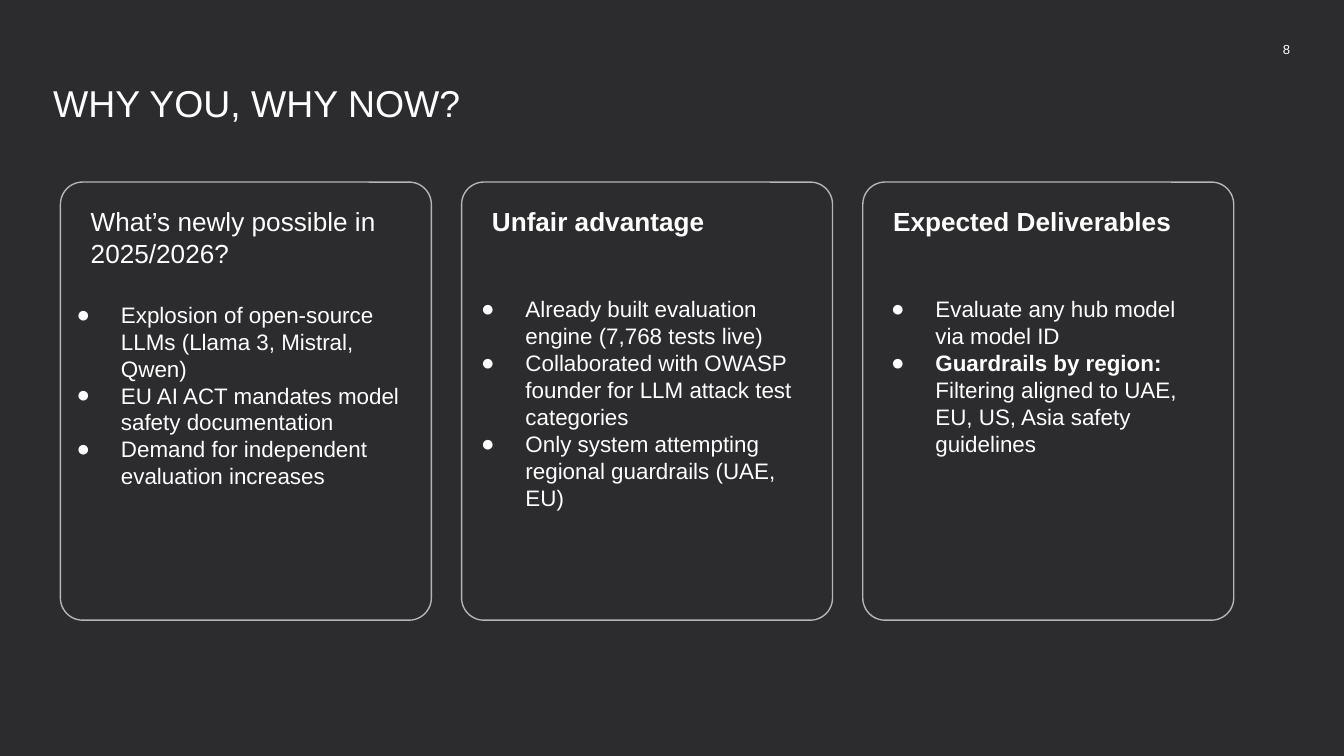
import pptx
import pptx.dml.color
import pptx.enum.shapes
import pptx.enum.text
import pptx.oxml
import pptx.oxml.ns
import pptx.util

PX = 9144
FONT = "Arial"
DARK, GREY, WHITE = "2C2C2E", "B5B5B7", "FFFFFF"
LEFT, STEP, WIDE = 45, 298.5, 276
CARDS = [
    ("What’s newly possible in 2025/2026?", False, (40, 209, 265), [
        "Explosion of open-source LLMs (Llama 3, Mistral, Qwen)",
        "EU AI ACT mandates model safety documentation",
        "Demand for independent evaluation increases"]),
    ("Unfair advantage", True, (341, 205, 265), [
        "Already built evaluation engine (7,768 tests live)",
        "Collaborated with OWASP founder for LLM attack test categories",
        "Only system attempting regional guardrails (UAE, EU)"]),
    ("Expected Deliverables", True, (646, 205, 249), [
        "Evaluate any hub model via model ID",
        ("Guardrails by region: ",
         "Filtering aligned to UAE, EU, US, Asia safety guidelines")]),
]


def px(*sizes):
    """Turn px lengths into EMU."""
    return [pptx.util.Emu(round(size * PX)) for size in sizes]


def paint(color, code):
    """Set a colour format from a hex string."""
    color.rgb = pptx.dml.color.RGBColor.from_string(code)


def style(part, size, bold=False):
    """Format the spacing and runs of a paragraph."""
    part.line_spacing = 1.0
    for run in part.runs:
        run.font.name = FONT
        run.font.size = pptx.util.Pt(size)
        run.font.bold = bold
        paint(run.font.color, WHITE)


def fit(frame, pad=0, anchor="TOP"):
    """Set the wrap, insets and anchor of a text frame."""
    frame.word_wrap = True
    frame.auto_size = pptx.enum.text.MSO_AUTO_SIZE.NONE
    frame.margin_left = frame.margin_right = 0
    frame.margin_top, frame.margin_bottom = px(pad, pad)
    frame.vertical_anchor = pptx.enum.text.MSO_ANCHOR[anchor]


def label(slide, text, box, size, bold=False, pad=0, anchor="TOP", align="LEFT"):
    """Add a text box with one paragraph."""
    frame = slide.shapes.add_textbox(*px(*box)).text_frame
    fit(frame, pad, anchor)
    frame.text = text
    part = frame.paragraphs[0]
    part.alignment = pptx.enum.text.PP_ALIGN[align]
    style(part, size, bold)


def bullet(part):
    """Give a paragraph a hanging round bullet."""
    props = part._p.get_or_add_pPr()
    props.set("marL", str(px(50)[0]))
    props.set("indent", str(px(-33)[0]))
    names = pptx.oxml.ns.nsdecls("a")
    for xml in (f'<a:buClr {names}><a:srgbClr val="{WHITE}"/></a:buClr>',
                f'<a:buFont {names} typeface="{FONT}"/>',
                f'<a:buChar {names} char="●"/>'):
        props.append(pptx.oxml.parse_xml(xml))


def points(slide, items, box):
    """Add a bulleted list; a pair has a bold lead."""
    frame = slide.shapes.add_textbox(*px(*box)).text_frame
    fit(frame, 15)
    for rank, item in enumerate(items):
        part = frame.add_paragraph() if rank else frame.paragraphs[0]
        bullet(part)
        texts = (item,) if isinstance(item, str) else item
        for text in texts:
            part.add_run().text = text
        style(part, 12)
        part.runs[0].font.bold = len(texts) > 1


def card(slide, left):
    """Add an outlined rounded card."""
    kind = pptx.enum.shapes.MSO_SHAPE.ROUNDED_RECTANGLE
    shape = slide.shapes.add_shape(kind, *px(left, 135.5, WIDE, 326))
    shape.adjustments[0] = 0.06
    shape.shadow.inherit = False
    shape.fill.background()
    shape.line.width = pptx.util.Pt(0.75)
    paint(shape.line.color, GREY)


def title(slide, text):
    """Place and format the title."""
    shape = slide.shapes.title
    shape.left, shape.top, shape.width, shape.height = px(39.5, 59, 915, 34)
    fit(shape.text_frame, anchor="BOTTOM")
    shape.text_frame.text = text
    part = shape.text_frame.paragraphs[0]
    part.alignment = pptx.enum.text.PP_ALIGN.LEFT
    style(part, 20)


def main():
    """Build the slide and save it."""
    deck = pptx.Presentation()
    deck.slide_width, deck.slide_height = px(1000, 562.5)
    slide = deck.slides.add_slide(deck.slide_layouts.get_by_name("Title Only"))
    slide.background.fill.solid()
    paint(slide.background.fill.fore_color, DARK)
    title(slide, "WHY YOU, WHY NOW?")
    label(slide, "8", (900, 24, 60, 26), 7, pad=10, anchor="MIDDLE", align="RIGHT")
    for rank, (head, bold, (x, y, wide), items) in enumerate(CARDS):
        left = LEFT + rank * STEP
        card(slide, left)
        label(slide, head, (left + 22.5, 153, 231, 34), 14, bold)
        points(slide, items, (x, y, wide, 256))
    deck.save("out.pptx")


if __name__ == "__main__":
    main()
